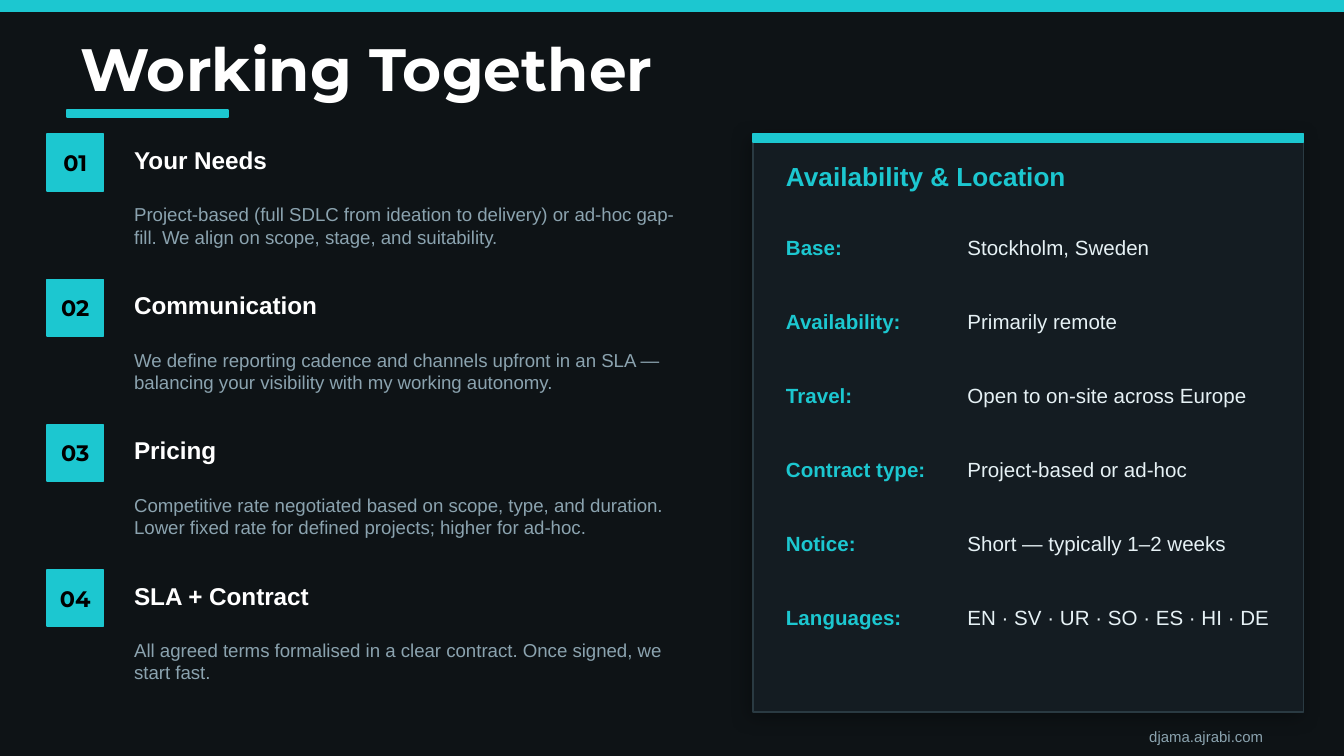
import pptx
import pptx.dml.color
import pptx.enum.shapes
import pptx.enum.text
import pptx.oxml
import pptx.util

Pt = pptx.util.Pt
color = pptx.dml.color.RGBColor.from_string
ALIGN = pptx.enum.text.PP_ALIGN
TEAL, WHITE, GRAY, PALE = "1CC7D0", "FFFFFF", "8BA3AF", "E6F1F5"


def add_rectangle(left, top, width, height, fill=TEAL, line=TEAL):
    shape = slide.shapes.add_shape(
        pptx.enum.shapes.MSO_SHAPE.RECTANGLE, Pt(left), Pt(top), Pt(width), Pt(height)
    )
    shape.shadow.inherit = False
    shape.fill.solid()
    shape.fill.fore_color.rgb = color(fill)
    shape.line.color.rgb = color(line)
    shape.line.width = Pt(1)
    return shape


def write_text(text, style, box=None, shape=None):
    if shape is None:
        shape = slide.shapes.add_textbox(*[Pt(length) for length in box])
    frame = shape.text_frame
    frame.word_wrap = True
    frame.auto_size = pptx.enum.text.MSO_AUTO_SIZE.NONE
    frame.vertical_anchor = pptx.enum.text.MSO_ANCHOR.MIDDLE
    for side, inset in style.get("margins", {}).items():
        setattr(frame, side, Pt(inset))
    paragraph = frame.paragraphs[0]
    paragraph.text = text
    paragraph.alignment = style.get("alignment", ALIGN.LEFT)
    for name, value in style["font"].items():
        setattr(paragraph.font, name, value)
    paragraph.font.color.rgb = color(style["color"])


no_margins = dict.fromkeys(["margin_left", "margin_top", "margin_right", "margin_bottom"], 0)
styles = {
    "title": {"font": {"name": "Montserrat", "size": Pt(32), "bold": True}, "color": WHITE},
    "number": {
        "font": {"name": "Montserrat", "size": Pt(12), "bold": True},
        "color": "000000",
        "alignment": ALIGN.CENTER,
        "margins": no_margins,
    },
    "heading": {"font": {"name": "Arial", "size": Pt(13), "bold": True}, "color": WHITE},
    "description": {"font": {"name": "Arial", "size": Pt(10)}, "color": GRAY},
    "card title": {"font": {"name": "Arial", "size": Pt(14), "bold": True}, "color": TEAL},
    "label": {"font": {"name": "Arial", "size": Pt(11), "bold": True}, "color": TEAL},
    "value": {"font": {"name": "Arial", "size": Pt(11)}, "color": PALE},
    "footer": {
        "font": {"name": "Arial", "size": Pt(8)},
        "color": GRAY,
        "alignment": ALIGN.RIGHT,
    },
}
steps = [
    ("Your Needs", "Project-based (full SDLC from ideation to delivery) or ad-hoc gap-fill. "
     "We align on scope, stage, and suitability."),
    ("Communication", "We define reporting cadence and channels upfront in an SLA — "
     "balancing your visibility with my working autonomy."),
    ("Pricing", "Competitive rate negotiated based on scope, type, and duration. "
     "Lower fixed rate for defined projects; higher for ad-hoc."),
    ("SLA + Contract", "All agreed terms formalised in a clear contract. "
     "Once signed, we start fast."),
]
details = [
    ("Base:", "Stockholm, Sweden"),
    ("Availability:", "Primarily remote"),
    ("Travel:", "Open to on-site across Europe"),
    ("Contract type:", "Project-based or ad-hoc"),
    ("Notice:", "Short — typically 1–2 weeks"),
    ("Languages:", "EN · SV · UR · SO · ES · HI · DE"),
]

presentation = pptx.Presentation()
presentation.slide_width = Pt(720)
presentation.slide_height = Pt(405)
slide = presentation.slides.add_slide(presentation.slide_layouts[5])
slide.background.fill.solid()
slide.background.fill.fore_color.rgb = color("0E1316")

add_rectangle(0, 0, 720, 5.76)
title = slide.shapes.title
title_box = {"left": 36, "top": 14.4, "width": 648, "height": 43.2}
for name, length in title_box.items():
    setattr(title, name, Pt(length))
write_text("Working Together", styles["title"], shape=title)
add_rectangle(36, 59.04, 86.4, 3.6)

for index, (heading, description) in enumerate(steps):
    top = 72 + index * 77.76
    badge = add_rectangle(25.2, top, 30.24, 30.24)
    write_text(f"{index + 1:02d}", styles["number"], shape=badge)
    write_text(heading, styles["heading"], (64.8, top, 288, 27.36))
    write_text(description, styles["description"], (64.8, top + 28.8, 309.6, 40.32))

card = add_rectangle(403.2, 72, 295.2, 309.6, "141C22", "2A3A42")
shadow = pptx.oxml.parse_xml(
    '<a:outerShdw xmlns:a="http://schemas.openxmlformats.org/drawingml/2006/main" '
    f'blurRad="{Pt(10)}" dist="{Pt(3)}" dir="{135 * 60000}" algn="bl" rotWithShape="0">'
    '<a:srgbClr val="000000"><a:alpha val="30000"/></a:srgbClr></a:outerShdw>'
)
card.element.spPr.find(pptx.oxml.ns.qn("a:effectLst")).append(shadow)
add_rectangle(403.2, 72, 295.2, 4.32)
write_text("Availability & Location", styles["card title"], (414, 79.2, 273.6, 30.24))

for index, (label, value) in enumerate(details):
    top = 118.8 + index * 39.6
    write_text(label, styles["label"], (414, top, 100.8, 27.36))
    write_text(value, styles["value"], (511.2, top, 180, 27.36))

write_text("djama.ajrabi.com", styles["footer"], (36, 387.36, 648, 14.4))

presentation.save("out.pptx")
